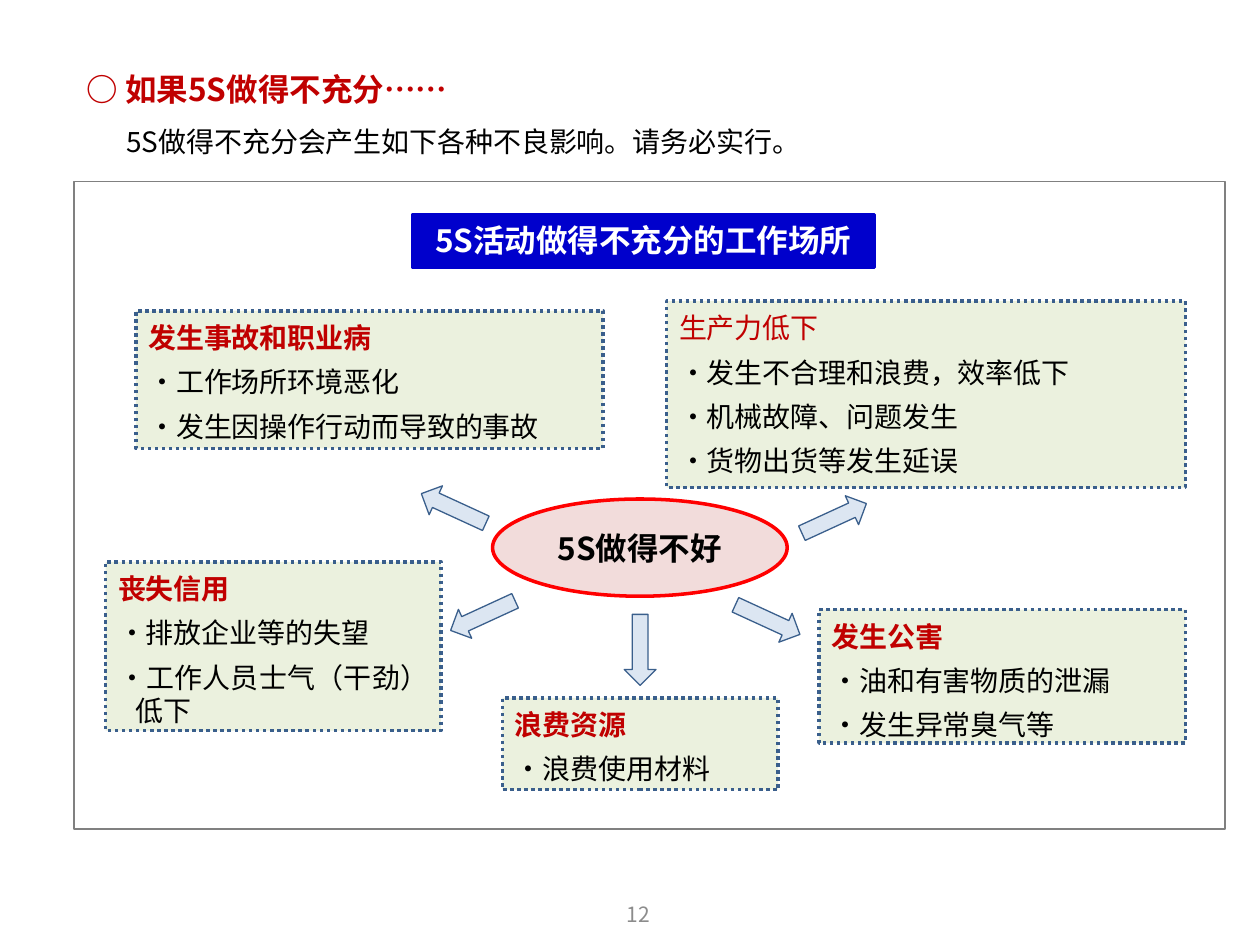
from pptx import Presentation
from pptx.dml.color import RGBColor
from pptx.enum.dml import MSO_LINE_DASH_STYLE as Dash
from pptx.enum.shapes import MSO_SHAPE as Preset
from pptx.enum.text import MSO_ANCHOR as Anchor, PP_ALIGN as Align
from pptx.oxml.ns import qn
from pptx.util import Cm, Pt
from lxml.etree import SubElement

FONT = "Noto Sans CJK SC"
COLORS = {
    "black": "000000", "white": "FFFFFF", "gray": "808080", "number": "8C8C8C",
    "banner": "0000CC", "heading": "C00000", "outline": "3A5F8C",
    "effect": "EBF1DE", "arrow": "DCE6F2", "center": "F2DCDB", "red": "FF0000",
}

FRAME = (1.5, 3.66, 23.19, 13.06)
BANNER = ("5S活动做得不充分的工作场所", (8.31, 4.32, 9.32, 1.08))
CENTER = ("5S做得不好", (9.93, 10.06, 5.94, 1.96))
HEADING = ("○ 如果5S做得不充分……", "5S做得不充分会产生如下各种不良影响。请务必实行。")
HEADING_AREA = (1.5, 0.91, 22.81, 2.29)
PAGE_NUMBER = ("12", (9.91, 17.91, 5.92, 1.02))

EFFECTS = [
    {"title": "发生事故和职业病", "bold": True, "hang": 0.5, "area": (2.74, 6.27, 9.42, 2.77),
     "points": ["工作场所环境恶化", "发生因操作行动而导致的事故"]},
    {"title": "生产力低下", "bold": False, "hang": 0.5, "area": (13.44, 6.07, 10.46, 3.76),
     "points": ["发生不合理和浪费，效率低下", "机械故障、问题发生", "货物出货等发生延误"]},
    {"title": "丧失信用", "bold": True, "hang": 0.36, "area": (2.13, 11.33, 6.76, 3.4),
     "points": ["排放企业等的失望", "工作人员士气（干劲）低下"]},
    {"title": "浪费资源", "bold": True, "hang": 0.5, "area": (10.13, 14.07, 5.56, 1.85),
     "points": ["浪费使用材料"]},
    {"title": "发生公害", "bold": True, "hang": 0.5, "area": (16.51, 12.29, 7.39, 2.69),
     "points": ["油和有害物质的泄漏", "发生异常臭气等"]},
]

TILT = 24.7
ARROW_SIZE = (1.43, 0.64)
ARROWS = [
    (8.43, 9.93, TILT),
    (9.02, 12.09, 360 - TILT),
    (16.1, 10.13, 180 - TILT),
    (14.76, 12.17, 180 + TILT),
    (12.19, 12.78, 270),
]


def color(name):
    return RGBColor.from_string(COLORS[name])


def add_box(slide, preset, area, fill=None, line="outline", width=1, dash=None):
    shape = slide.shapes.add_shape(preset, *map(Cm, area))
    shape.shadow.inherit = False
    if fill:
        shape.fill.solid()
        shape.fill.fore_color.rgb = color(fill)
    else:
        shape.fill.background()
    shape.line.color.rgb = color(line)
    shape.line.width = Pt(width)
    if dash:
        shape.line.dash_style = dash
    return shape


def prepare_frame(shape, anchor=Anchor.TOP, top=0.13):
    frame = shape.text_frame
    frame.word_wrap = True
    frame.vertical_anchor = anchor
    frame.margin_top = Cm(top)
    return frame


def write(frame, text, size=16, ink="black", bold=False, align=Align.JUSTIFY,
          before=0, spacing=None, left=0, indent=0):
    first = frame.paragraphs[0]
    paragraph = frame.add_paragraph() if first.runs else first
    paragraph.alignment = align
    paragraph.space_before = Pt(before)
    if spacing:
        paragraph.line_spacing = spacing
    properties = paragraph._p.get_or_add_pPr()
    properties.set("marL", str(Cm(left)))
    properties.set("indent", str(Cm(indent)))
    run = paragraph.add_run()
    run.text = text
    run.font.size = Pt(size)
    run.font.bold = bold
    run.font.color.rgb = color(ink)
    run.font.name = FONT
    SubElement(run._r.get_or_add_rPr(), qn("a:ea")).set("typeface", FONT)


def add_effect(slide, effect):
    shape = add_box(slide, Preset.RECTANGLE, effect["area"], "effect", width=2,
                    dash=Dash.ROUND_DOT)
    frame = prepare_frame(shape, top=0.2)
    write(frame, effect["title"], ink="heading", bold=effect["bold"])
    hang = effect["hang"]
    for point in effect["points"]:
        write(frame, "・" + point, before=6, left=hang, indent=-hang)


def main():
    presentation = Presentation()
    presentation.slide_width, presentation.slide_height = Cm(25.4), Cm(19.05)
    slide = presentation.slides.add_slide(presentation.slide_layouts[6])

    add_box(slide, Preset.RECTANGLE, FRAME, line="gray")

    text, area = BANNER
    banner = add_box(slide, Preset.RECTANGLE, area, "banner", "banner", 1.5)
    write(prepare_frame(banner), text, size=18, ink="white", bold=True, align=Align.CENTER)

    text, area = CENTER
    center = add_box(slide, Preset.OVAL, area, "center", "red", 2)
    write(prepare_frame(center, Anchor.MIDDLE), text, size=18, bold=True, align=Align.CENTER)

    for effect in EFFECTS:
        add_effect(slide, effect)

    for left, top, angle in ARROWS:
        arrow = add_box(slide, Preset.LEFT_ARROW, (left, top, *ARROW_SIZE), "arrow", width=0.75)
        arrow.rotation = angle

    title, subtitle = HEADING
    frame = prepare_frame(slide.shapes.add_textbox(*map(Cm, HEADING_AREA)))
    write(frame, title, size=18, ink="heading", bold=True, spacing=1.5)
    write(frame, subtitle, spacing=1.5, left=0.8)

    text, area = PAGE_NUMBER
    frame = prepare_frame(slide.shapes.add_textbox(*map(Cm, area)), Anchor.MIDDLE)
    write(frame, text, size=12, ink="number", align=Align.CENTER)

    presentation.save("out.pptx")


if __name__ == "__main__":
    main()
